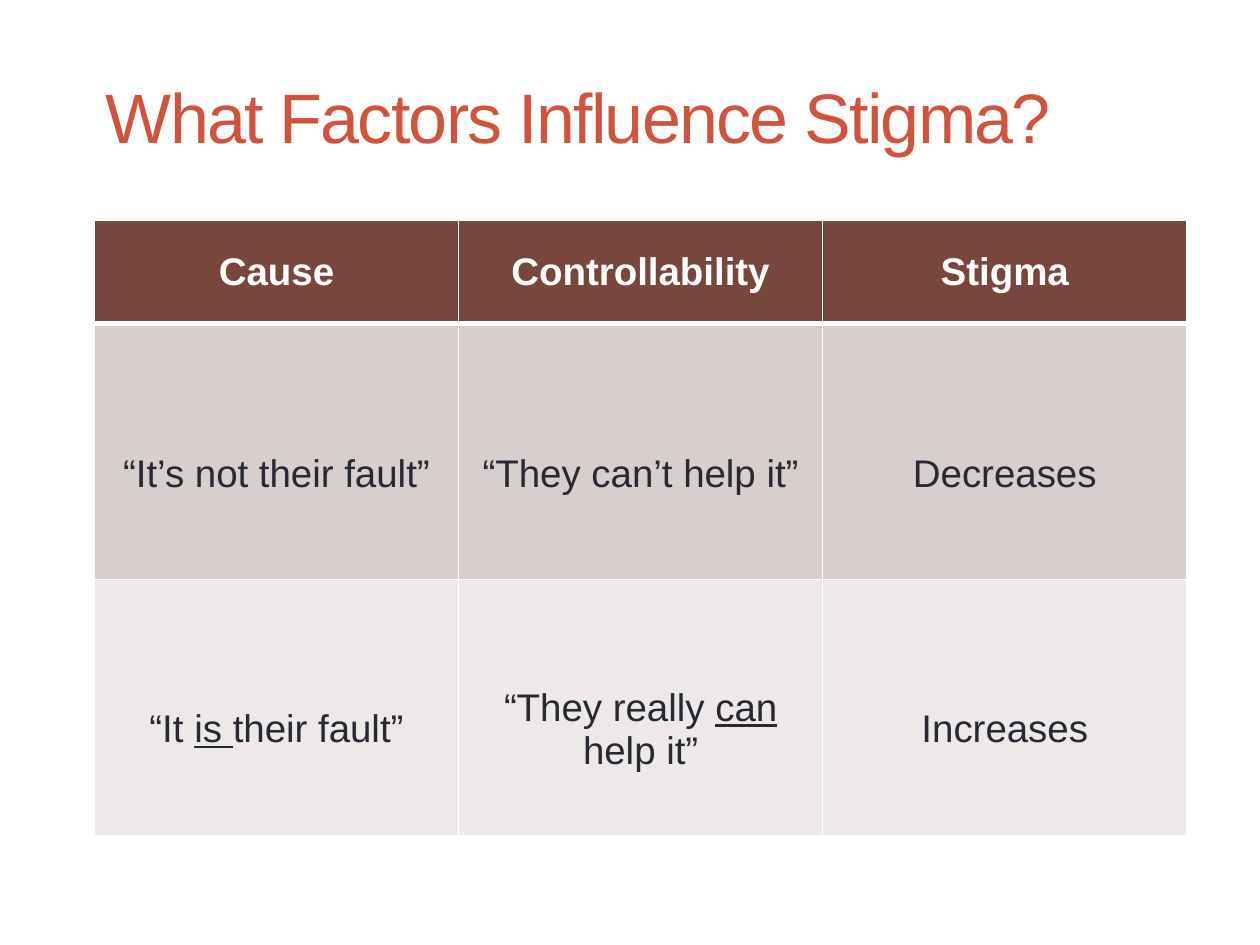
import dataclasses

import lxml.etree
import pptx
import pptx.dml.color
import pptx.enum.text
import pptx.oxml.ns
import pptx.util

Inches = pptx.util.Inches
Pt = pptx.util.Pt


@dataclasses.dataclass(frozen=True)
class Theme:
    font: str = "Arial"
    title: str = "D2533C"
    header_text: str = "FFFFFF"
    body_text: str = "292934"
    border: str = "FFFFFF"
    row_fills: tuple[str, ...] = ("79463D", "D7CFCE", "ECE9E8")
    title_size: int = 40
    table_size: int = 22
    thin: int = 1
    thick: int = 3


@dataclasses.dataclass(frozen=True)
class Span:
    text: str
    underline: bool = False


@dataclasses.dataclass(frozen=True)
class Grid:
    left: float = 0.75
    top: float = 1.75
    column: float = 2.89
    rows: tuple[float, ...] = (0.82, 2.03, 2.03)
    body_drop: float = 0.4  # top margin that lowers the body text by a line


THEME = Theme()
GRID = Grid()
ROWS = (
    ((Span("Cause"),), (Span("Controllability"),), (Span("Stigma"),)),
    ((Span("“It’s not their fault”"),), (Span("“They can’t help it”"),), (Span("Decreases"),)),
    (
        (Span("“It "), Span("is ", True), Span("their fault”")),
        (Span("“They really "), Span("can ", True), Span("help it”")),
        (Span("Increases"),),
    ),
)


def add_span(para, span: Span, size: int, color: str, bold: bool = False):
    run = para.add_run()
    run.text = span.text
    run.font.name = THEME.font
    run.font.size = Pt(size)
    run.font.bold = bold
    run.font.underline = span.underline
    run.font.color.rgb = pptx.dml.color.RGBColor.from_string(color)
    return run


def set_borders(cell, bottom: int) -> None:
    """Put the four side lines ahead of the cell's fill, as the schema asks."""
    properties = cell._tc.get_or_add_tcPr()
    widths = {"lnL": THEME.thin, "lnR": THEME.thin, "lnT": THEME.thin, "lnB": bottom}
    for place, (side, width) in enumerate(widths.items()):
        line = lxml.etree.Element(pptx.oxml.ns.qn(f"a:{side}"), w=str(Pt(width)))
        solid = lxml.etree.SubElement(line, pptx.oxml.ns.qn("a:solidFill"))
        lxml.etree.SubElement(solid, pptx.oxml.ns.qn("a:srgbClr"), val=THEME.border)
        properties.insert(place, line)


def fill_cell(cell, spans: tuple[Span, ...], row: int) -> None:
    header = row == 0
    cell.fill.solid()
    cell.fill.fore_color.rgb = pptx.dml.color.RGBColor.from_string(THEME.row_fills[row])
    cell.vertical_anchor = pptx.enum.text.MSO_ANCHOR.MIDDLE
    if not header:
        cell.margin_top = Inches(GRID.body_drop)
    para = cell.text_frame.paragraphs[0]
    para.alignment = pptx.enum.text.PP_ALIGN.CENTER
    color = THEME.header_text if header else THEME.body_text
    for span in spans:
        add_span(para, span, THEME.table_size, color, header)
    # The header's rule is shared with the row beneath it
    set_borders(cell, THEME.thick if header else THEME.thin)
    if row == 1:
        cell._tc.tcPr.find(pptx.oxml.ns.qn("a:lnT")).set("w", str(Pt(THEME.thick)))


def add_title(page, text: str) -> None:
    box = page.shapes.title
    box.left, box.top = Inches(0.74), Inches(0.38)
    box.width, box.height = Inches(9), Inches(1.08)
    frame = box.text_frame
    frame.word_wrap = True
    frame.vertical_anchor = pptx.enum.text.MSO_ANCHOR.MIDDLE
    para = frame.paragraphs[0]
    para.alignment = pptx.enum.text.PP_ALIGN.LEFT
    run = add_span(para, Span(text), THEME.title_size, THEME.title)
    run.font._element.set("spc", "-100")


def add_stigma_table(page) -> None:
    columns = len(ROWS[0])
    table = page.shapes.add_table(
        len(ROWS), columns, Inches(GRID.left), Inches(GRID.top),
        Inches(GRID.column * columns), Inches(sum(GRID.rows)),
    ).table
    table.horz_banding = False
    for column in table.columns:
        column.width = Inches(GRID.column)
    for row, cells in enumerate(ROWS):
        table.rows[row].height = Inches(GRID.rows[row])
        for column, spans in enumerate(cells):
            fill_cell(table.cell(row, column), spans, row)


def main() -> None:
    deck = pptx.Presentation()
    deck.slide_width, deck.slide_height = Inches(10), Inches(7.5)
    page = deck.slides.add_slide(deck.slide_layouts.get_by_name("Title Only"))
    add_title(page, "What Factors Influence Stigma?")
    add_stigma_table(page)
    deck.save("out.pptx")


if __name__ == "__main__":
    main()
